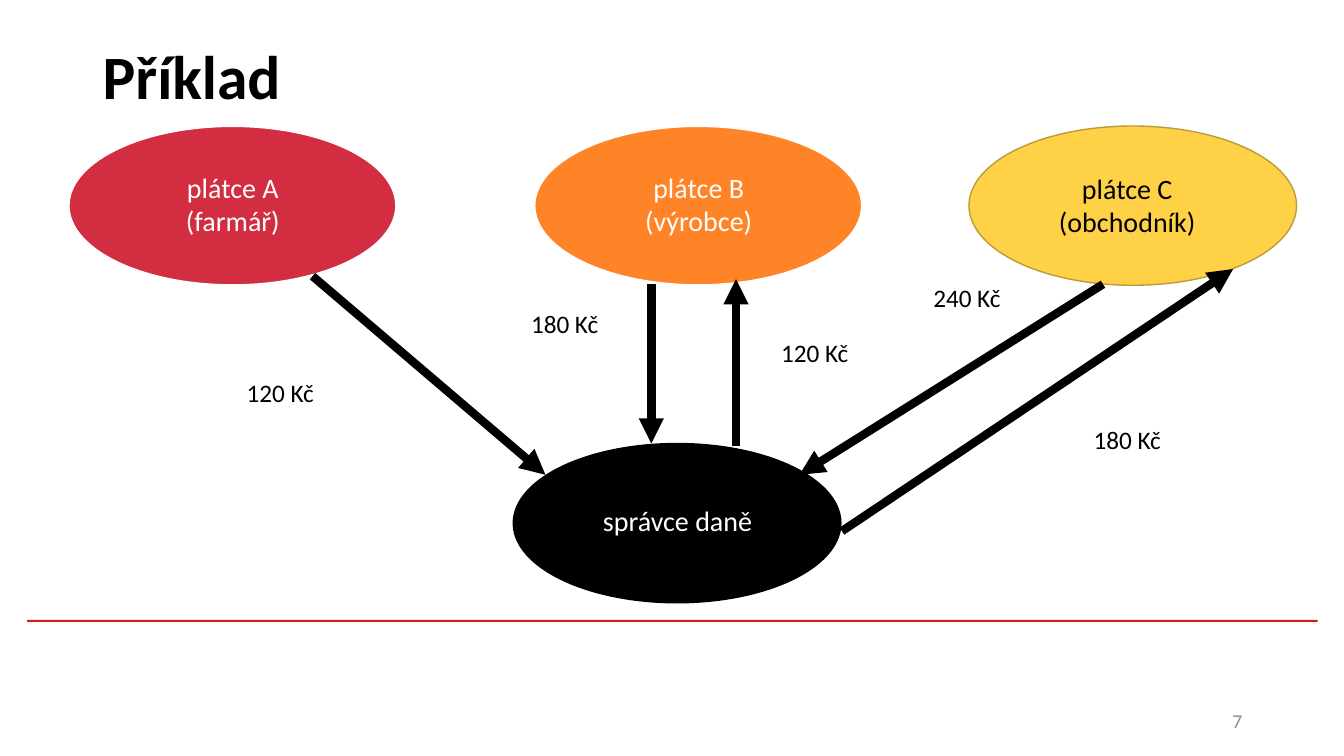
"""Build the slide showing value added tax flows between payers and the tax office."""
from lxml.etree import SubElement
from pptx import Presentation
from pptx.dml.color import RGBColor
from pptx.enum.shapes import MSO_CONNECTOR, MSO_SHAPE
from pptx.enum.text import MSO_ANCHOR, PP_ALIGN
from pptx.oxml.ns import qn
from pptx.util import Pt

PX = 9144
BLACK, WHITE = "000000", "FFFFFF"


def color(value):
    return RGBColor.from_string(value)


def add_text(left, top, width, height, text, size, ink,
             align=PP_ALIGN.CENTER, anchor=MSO_ANCHOR.TOP, bold=False):
    box = page.shapes.add_textbox(left * PX, top * PX, width * PX, height * PX)
    frame = box.text_frame
    frame.word_wrap = True
    frame.vertical_anchor = anchor
    para = frame.paragraphs[0]
    para.text = text
    para.alignment = align
    para.font.name = "Calibri"
    para.font.size = Pt(size)
    para.font.bold = bold
    para.font.color.rgb = color(ink)


deck = Presentation()
deck.slide_width, deck.slide_height = 1333 * PX, 750 * PX
page = deck.slides.add_slide(deck.slide_layouts[6])

rule = page.shapes.add_shape(MSO_SHAPE.RECTANGLE, 27 * PX, 615 * PX, 1280 * PX, 2 * PX)
rule.shadow.inherit = False
rule.fill.solid()
rule.fill.fore_color.rgb = color("CD1F21")
rule.line.fill.background()

add_text(92, 2, 1150, 145, "Příklad", 44, BLACK, PP_ALIGN.LEFT, MSO_ANCHOR.MIDDLE, True)
add_text(942, 695, 300, 40, "7", 14, "8C8C8C", PP_ALIGN.RIGHT, MSO_ANCHOR.MIDDLE)

parties = [
    (961, 125, "FFD147", "BD9B35", 1, "plátce C\v(obchodník)", (987, 165, 262, 77), BLACK),
    (509, 440, BLACK, BLACK, 1, "správce daně", (572, 495, 200, 44), WHITE),
    (530, 125, "FF8427", WHITE, 1.5, "plátce B\v(výrobce)", (593, 164, 200, 77), WHITE),
    (68, 125, "D22D40", WHITE, 1.5, "plátce A\v(farmář)", (131, 164, 200, 77), WHITE),
]
for left, top, fill, outline, weight, name, name_area, ink in parties:
    party = page.shapes.add_shape(MSO_SHAPE.OVAL, left * PX, top * PX, 325 * PX, 158 * PX)
    party.shadow.inherit = False
    party.fill.solid()
    party.fill.fore_color.rgb = color(fill)
    party.line.color.rgb = color(outline)
    party.line.width = Pt(weight)
    add_text(*name_area, name, 20, ink)

payments = [
    ((310, 274), (541, 471), "120 Kč", (152, 369)),
    ((730, 442), (730, 277), "120 Kč", (682, 330)),
    ((646, 282), (646, 440), "180 Kč", (434, 301)),
    ((1094, 282), (793, 471), "240 Kč", (833, 275)),
    ((835, 527), (1223, 267), "180 Kč", (992, 416)),
]
for start, end, amount, (left, top) in payments:
    ends = [value * PX for value in start + end]
    arrow = page.shapes.add_connector(MSO_CONNECTOR.STRAIGHT, *ends)
    arrow.line.color.rgb = color(BLACK)
    arrow.line.width = Pt(6)
    SubElement(arrow.line._get_or_add_ln(), qn("a:tailEnd"), type="triangle")
    SubElement(arrow._element.spPr, qn("a:effectLst"))
    add_text(left, top, 252, 40, amount, 18, BLACK)

deck.save("out.pptx")
